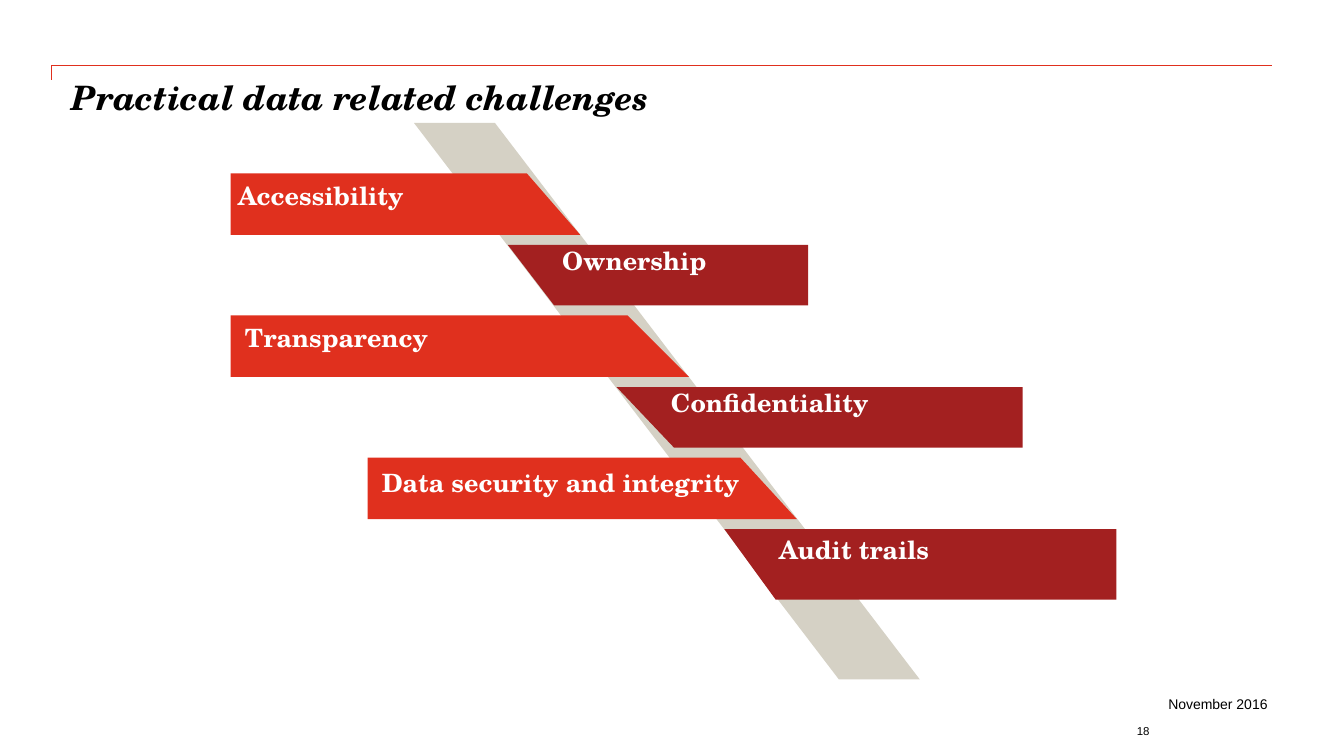
from pptx import Presentation
from pptx.dml.color import RGBColor
from pptx.enum.shapes import MSO_CONNECTOR, MSO_SHAPE
from pptx.enum.text import MSO_ANCHOR, PP_ALIGN
from pptx.oxml.ns import qn
from pptx.util import Pt
from lxml import etree

PX = 9144  # 100 px to the inch
ELBOW = MSO_CONNECTOR.ELBOW
PARALLELOGRAM = MSO_SHAPE.PARALLELOGRAM
TOP, MIDDLE = MSO_ANCHOR.TOP, MSO_ANCHOR.MIDDLE
LEFT, RIGHT = PP_ALIGN.LEFT, PP_ALIGN.RIGHT
TITLE_ONLY = 5

COLORS = {"red": "E0301E", "maroon": "A32020", "band": "D5D1C5",
          "black": "000000", "white": "FFFFFF"}
SERIF, SANS = "TeX Gyre Schola", "Arial"
FORMATS = {
    "title": {"name": SERIF, "size": Pt(24), "bold": True, "italic": True},
    "label": {"name": SERIF, "size": Pt(18), "bold": True},
    "date": {"name": SANS, "size": Pt(10)},
    "number": {"name": SANS, "size": Pt(8.2)},
}

# label, box, slant, text inset (left, top)
RED_BARS = [
    ("Accessibility", (229, 172, 347, 61), 53, (7, 7)),
    ("Transparency", (229, 313, 455, 61), 61, (14, 7)),
    ("Data security and integrity", (365, 454, 426, 61), 56, (14, 10)),
]
MAROON_BARS = [
    ("Ownership", (504, 243, 298, 60), 46, (54, 0)),
    ("Confidentiality", (612, 384, 403, 60), 57, (54, 0)),
    ("Audit trails", (719, 525, 389, 70), 51, (54, 5)),
]


def emu(box):
    return [length * PX for length in box]


def color(name):
    return RGBColor.from_string(COLORS[name])


def write(shape, text, style, ink, inset=(0, 0), align=LEFT, anchor=TOP):
    frame = shape.text_frame
    left, top = emu(inset)
    settings = {"word_wrap": True, "vertical_anchor": anchor, "margin_left": left,
                "margin_top": top, "margin_right": 0, "margin_bottom": 0}
    for name, value in settings.items():
        setattr(frame, name, value)
    paragraph = frame.paragraphs[0]
    paragraph.alignment = align
    run = paragraph.add_run()
    run.text = text
    for name, value in FORMATS[style].items():
        setattr(run.font, name, value)
    run.font.color.rgb = color(ink)


def paint(shape, fill):
    shape.shadow.inherit = False
    shape.fill.solid()
    shape.fill.fore_color.rgb = color(fill)
    shape.line.fill.background()


def add_header(slide, box):
    left, top, width, height = box
    # Rule with a tick at its left end
    rule = slide.shapes.add_connector(
        ELBOW, *emu((left, top + 14, left + width, top)))
    rule.line.color.rgb = color("red")
    rule.line.width = Pt(1)
    properties = rule._element.spPr
    etree.SubElement(properties, qn("a:effectLst"))
    guides = properties.find(qn("a:prstGeom")).get_or_add_avLst()
    etree.SubElement(guides, qn("a:gd"), name="adj1", fmla="val 0")
    # Title
    title = slide.shapes.title
    title.left, title.top, title.width, title.height = emu(
        (left + 20, top + 11, width - 17, height - 11))
    write(title, "Practical data related challenges", "title", "black")


def add_band(slide, box):
    band = slide.shapes.add_shape(PARALLELOGRAM, *emu(box))
    band.adjustments[0] = 0.84
    band._element.spPr.xfrm.set("flipH", "1")
    paint(band, "band")


def add_bar(slide, box, label, slant, inset, fill):
    left, top, width, height = box
    right, bottom = left + width, top + height
    if fill == "red":  # slanted at the right end
        corners = [(left, top), (right - slant, top), (right, bottom), (left, bottom)]
    else:  # slanted at the left end
        corners = [(left, top), (right, top), (right, bottom), (left + slant, bottom)]
    builder = slide.shapes.build_freeform(*corners[0], scale=PX)
    builder.add_line_segments(corners[1:], close=True)
    bar = builder.convert_to_shape()
    paint(bar, fill)
    write(bar, label, "label", "white", inset)


def add_footer(slide, box):
    left, top, width, height = box
    date = slide.shapes.add_textbox(*emu((left + width - 142, top, 142, 39)))
    write(date, "November 2016", "date", "black", align=RIGHT)
    number = slide.shapes.add_textbox(*emu((left, top + height - 15, 177, 15)))
    write(number, "18", "number", "black", align=RIGHT, anchor=MIDDLE)


def main():
    presentation = Presentation()
    presentation.slide_width, presentation.slide_height = emu((1334, 750))
    slide = presentation.slides.add_slide(presentation.slide_layouts[TITLE_ONLY])
    add_header(slide, (51, 65, 1212, 99))
    add_band(slide, (411, 122, 502, 552))
    for fill, bars in (("red", RED_BARS), ("maroon", MAROON_BARS)):
        for label, box, slant, inset in bars:
            add_bar(slide, box, label, slant, inset, fill)
    add_footer(slide, (964, 690, 294, 43))
    presentation.save("out.pptx")


if __name__ == "__main__":
    main()
